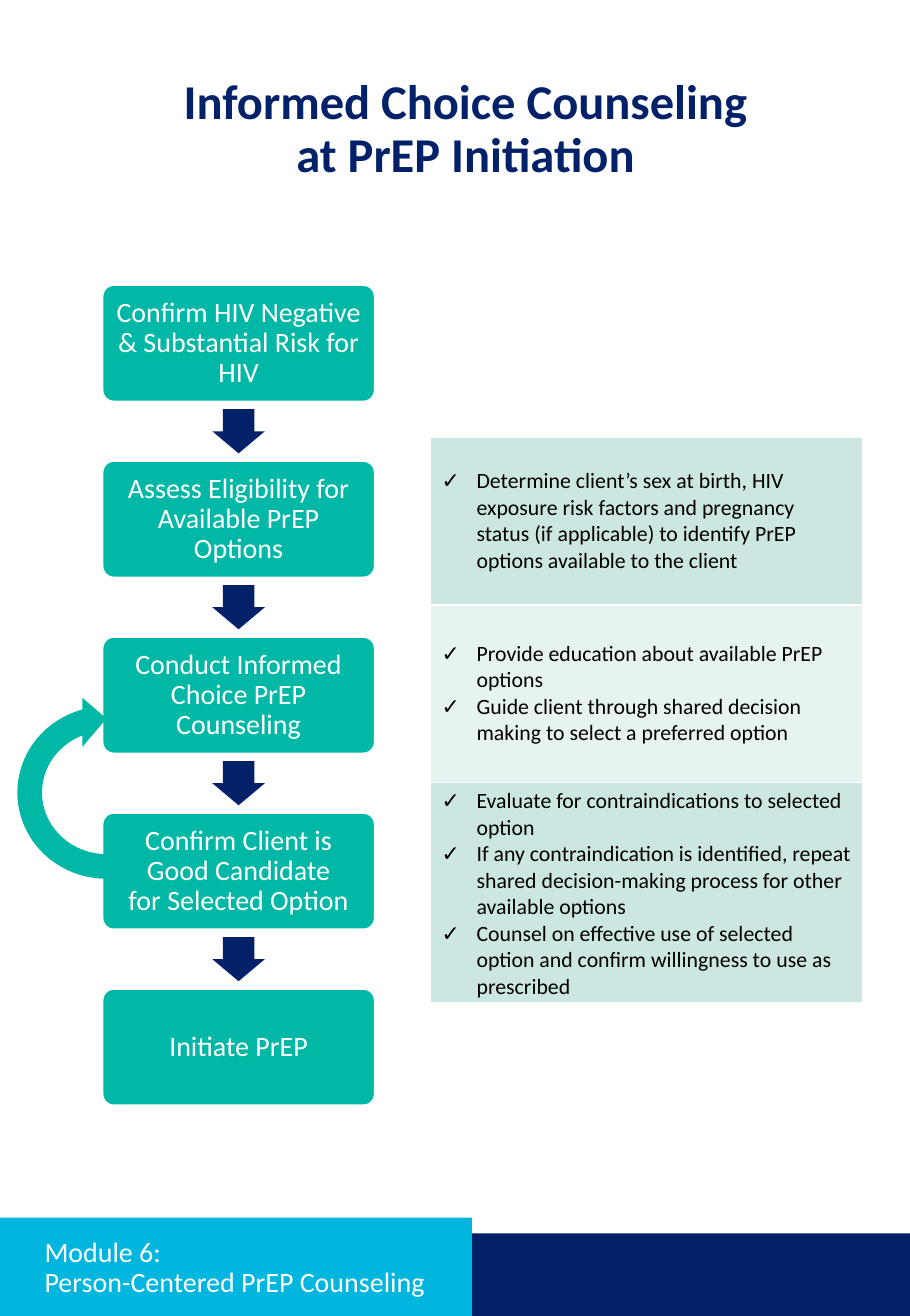
from lxml.etree import SubElement
from pptx import Presentation
from pptx.dml.color import RGBColor
from pptx.enum.shapes import MSO_SHAPE
from pptx.enum.text import MSO_ANCHOR, PP_ALIGN
from pptx.oxml.ns import qn
from pptx.util import Cm, Pt

COLORS = {
    "navy": "022169",
    "cyan": "00B5DE",
    "teal": "00B8A5",
    "mint": "CCE6E1",
    "pale": "E7F3F0",
    "white": "FFFFFF",
    "black": "000000",
}
FONT = "Calibri"
PAGE_W, PAGE_H = 20.63, 29.84

STEPS = [
    "Confirm HIV Negative & Substantial Risk for HIV",
    "Assess Eligibility for Available PrEP Options",
    "Conduct Informed Choice PrEP Counseling",
    "Confirm Client is Good Candidate\vfor Selected Option",
    "Initiate PrEP",
]

# Row height, fill, checklist
DETAILS = [
    (3.81, "mint", [
        "Determine client’s sex at birth, HIV exposure risk factors and pregnancy "
        "status (if applicable) to identify PrEP options available to the client",
    ]),
    (4.02, "pale", [
        "Provide education about available PrEP options",
        "Guide client through shared decision making to select a preferred option",
    ]),
    (5.0, "mint", [
        "Evaluate for contraindications to selected option",
        "If any contraindication is identified, repeat shared decision-making "
        "process for other available options",
        "Counsel on effective use of selected option and confirm willingness to "
        "use as prescribed",
    ]),
]


def rgb(name):
    return RGBColor.from_string(COLORS[name])


def write(tf, *texts, size=18, color="white", bold=False, align=PP_ALIGN.LEFT,
          spacing=None, bullet=None):
    """Fill a text frame with one formatted paragraph per text."""
    tf.word_wrap = True
    for i, text in enumerate(texts):
        p = tf.paragraphs[0] if i == 0 else tf.add_paragraph()
        p.text = text
        p.alignment = align
        p.line_spacing = spacing
        if bullet:
            add_bullet(p, bullet)
        for r in p.runs:
            r.font.name = FONT
            r.font.size = Pt(size)
            r.font.bold = bold
            r.font.color.rgb = rgb(color)


def add_bullet(p, char, indent=0.79):
    pPr = p._p.get_or_add_pPr()
    pPr.set("marL", str(Cm(indent)))
    pPr.set("indent", str(-Cm(indent)))
    SubElement(pPr, qn("a:buFont")).set("typeface", FONT)
    SubElement(pPr, qn("a:buChar")).set("char", char)


def add_shape(slide, kind, x, y, w, h, fill, line=None):
    sp = slide.shapes.add_shape(kind, Cm(x), Cm(y), Cm(w), Cm(h))
    sp.shadow.inherit = False
    sp.fill.solid()
    sp.fill.fore_color.rgb = rgb(fill)
    if line:
        sp.line.color.rgb = rgb(line)
        sp.line.width = Pt(2)
    else:
        sp.line.fill.background()
    return sp


def add_text(slide, x, y, w, h, text, anchor=MSO_ANCHOR.TOP, **fmt):
    tf = slide.shapes.add_textbox(Cm(x), Cm(y), Cm(w), Cm(h)).text_frame
    tf.vertical_anchor = anchor
    write(tf, text, spacing=0.9, **fmt)


def set_borders(cell, color, width):
    tcPr = cell._tc.get_or_add_tcPr()
    for side in ("a:lnL", "a:lnR", "a:lnT", "a:lnB"):
        ln = SubElement(tcPr, qn(side), w=str(Pt(width)))
        fill = SubElement(ln, qn("a:solidFill"))
        SubElement(fill, qn("a:srgbClr"), val=COLORS[color])


def build_steps(slide, x, y, w, box_h=2.67, pitch=3.99):
    """Stack the step boxes, with a down arrow centred in each gap."""
    arrow_w, arrow_h = 1.19, 1.0
    for i, step in enumerate(STEPS):
        top = y + i * pitch
        box = add_shape(slide, MSO_SHAPE.ROUNDED_RECTANGLE, x, top, w, box_h,
                        "teal", line="white")
        box.adjustments[0] = 0.1
        tf = box.text_frame
        tf.vertical_anchor = MSO_ANCHOR.MIDDLE
        tf.margin_left = tf.margin_right = Cm(0.18)
        tf.margin_top = tf.margin_bottom = Cm(0.18)
        write(tf, step, align=PP_ALIGN.CENTER, spacing=0.9)
        if i < len(STEPS) - 1:
            arrow = add_shape(slide, MSO_SHAPE.DOWN_ARROW, x + (w - arrow_w) / 2,
                              top + (box_h + pitch - arrow_h) / 2,
                              arrow_w, arrow_h, "navy")
            arrow.adjustments[0] = 0.6
            arrow.adjustments[1] = 0.5


def build_details(slide, x, y, w):
    """Checklist table beside the middle steps."""
    height = sum(row_h for row_h, _, _ in DETAILS)
    table = slide.shapes.add_table(len(DETAILS), 1, Cm(x), Cm(y), Cm(w),
                                   Cm(height)).table
    table.first_row = table.horz_banding = False
    for i, (row_h, fill, items) in enumerate(DETAILS):
        table.rows[i].height = Cm(row_h)
        cell = table.cell(i, 0)
        cell.vertical_anchor = MSO_ANCHOR.MIDDLE
        set_borders(cell, "white", 1)
        cell.fill.solid()
        cell.fill.fore_color.rgb = rgb(fill)
        write(cell.text_frame, *items, size=14, color="black", bullet="✓")


def build_repeat_arrow(slide, x, y, w, h):
    add_shape(slide, MSO_SHAPE.CIRCULAR_ARROW, x, y, w, h, "teal").rotation = 270


def build_footer(slide, y, h, tab_w=10.7, step=0.36):
    """Raised module tab on the left and a lower bar filling the rest."""
    add_shape(slide, MSO_SHAPE.RECTANGLE, tab_w, y + step, PAGE_W - tab_w,
              h - step, "navy")
    add_shape(slide, MSO_SHAPE.RECTANGLE, 0, y, tab_w, h, "cyan")
    add_text(slide, 0.76, y + 0.51, tab_w - 0.13 - 0.76, 1.27,
             "Module 6:\vPerson-Centered PrEP Counseling",
             anchor=MSO_ANCHOR.MIDDLE)


def main():
    prs = Presentation()
    prs.slide_width, prs.slide_height = Cm(PAGE_W), Cm(PAGE_H)
    slide = prs.slides.add_slide(prs.slide_layouts[6])
    build_footer(slide, 27.61, PAGE_H - 27.61)
    add_text(slide, 3.71, 1.64, 13.69, 3.91,
             "Informed Choice Counseling at PrEP Initiation",
             size=31.2, color="navy", bold=True, align=PP_ALIGN.CENTER)
    build_steps(slide, 2.31, 6.45, 6.2)
    build_details(slide, 9.76, 9.91, 9.8)
    build_repeat_arrow(slide, 0.18, 15.67, 4.47, 4.6)
    prs.save("out.pptx")


if __name__ == "__main__":
    main()
